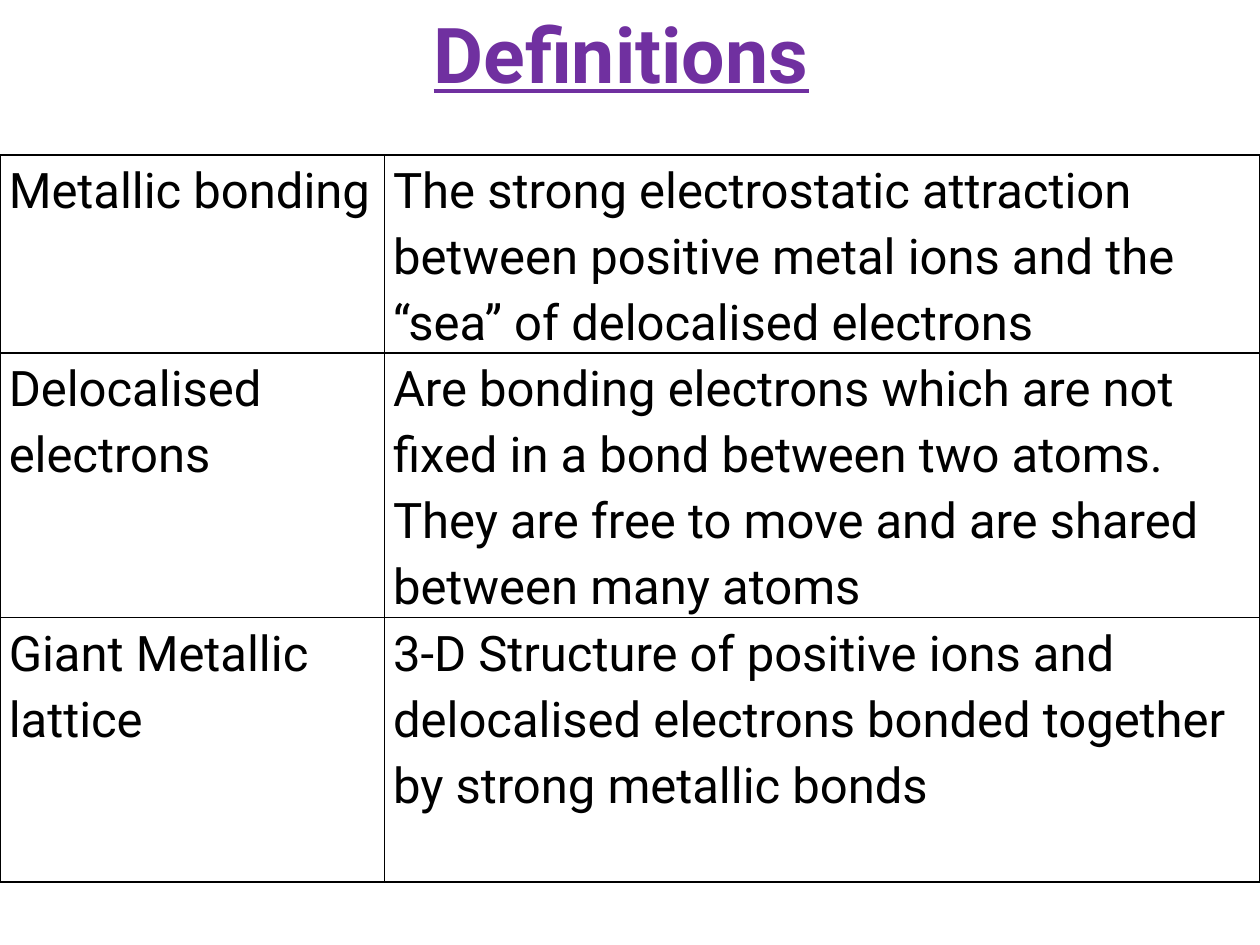
from lxml.etree import SubElement
from pptx import Presentation
from pptx.dml.color import RGBColor
from pptx.enum.text import MSO_ANCHOR, PP_ALIGN
from pptx.oxml.ns import qn
from pptx.util import Inches, Pt

PURPLE = RGBColor(0x70, 0x30, 0xA0)
BLACK = RGBColor(0x00, 0x00, 0x00)

DEFINITIONS = [
    ("Metallic bonding",
     "The strong electrostatic attraction between positive metal ions and the "
     "“sea” of delocalised electrons"),
    ("Delocalised electrons",
     "Are bonding electrons which are not fixed in a bond between two atoms. "
     "They are free to move and are shared between many atoms"),
    ("Giant Metallic lattice",
     "3-D Structure of positive ions and delocalised electrons bonded together "
     "by strong metallic bonds"),
]
COLUMN_WIDTHS = [3.05, 6.95]
ROW_HEIGHTS = [1.57, 2.1, 2.1]


class SlideBuilder:
    """Holds the text style and the current slide, and adds its elements."""

    def __init__(self, slide, font="Roboto"):
        self.slide = slide
        self.font = font

    def add_span(self, para, text, size, color):
        span = para.add_run()
        span.text = text
        span.font.name = self.font
        span.font.size = Pt(size)
        span.font.color.rgb = color
        return span

    def add_title(self, text, left, top, width, height):
        box = self.slide.shapes.title
        box.left, box.top = Inches(left), Inches(top)
        box.width, box.height = Inches(width), Inches(height)
        box.text_frame.vertical_anchor = MSO_ANCHOR.MIDDLE
        para = box.text_frame.paragraphs[0]
        para.alignment = PP_ALIGN.CENTER
        span = self.add_span(para, text, 44, PURPLE)
        span.font.bold = True
        span.font.underline = True

    def add_borders(self, cell):
        properties = cell._tc.get_or_add_tcPr()
        for side in ("a:lnL", "a:lnR", "a:lnT", "a:lnB"):
            line = SubElement(properties, qn(side), w=str(Pt(1)))
            fill = SubElement(line, qn("a:solidFill"))
            SubElement(fill, qn("a:srgbClr"), val=str(BLACK))

    def fill_cell(self, cell, text):
        cell.margin_left = cell.margin_right = Inches(0.07)
        cell.margin_top = cell.margin_bottom = 0
        self.add_borders(cell)
        cell.fill.background()
        para = cell.text_frame.paragraphs[0]
        para.line_spacing = 1.15
        self.add_span(para, text, 28, BLACK)

    def add_table(self, entries, left, top, widths, heights):
        frame = self.slide.shapes.add_table(
            len(heights), len(widths), Inches(left), Inches(top),
            Inches(sum(widths)), Inches(sum(heights)))
        table = frame.table
        table.first_row = table.horz_banding = False
        for column, width in zip(table.columns, widths):
            column.width = Inches(width)
        for row, height, texts in zip(table.rows, heights, entries):
            row.height = Inches(height)
            for cell, text in zip(row.cells, texts):
                self.fill_cell(cell, text)


def main():
    deck = Presentation()
    deck.slide_width, deck.slide_height = Inches(10), Inches(7.5)
    page = SlideBuilder(deck.slides.add_slide(deck.slide_layouts[5]))
    page.add_title("Definitions", 0.43, 0, 9, 0.84)
    page.add_table(DEFINITIONS, 0, 1.23, COLUMN_WIDTHS, ROW_HEIGHTS)
    deck.save("out.pptx")


if __name__ == "__main__":
    main()
